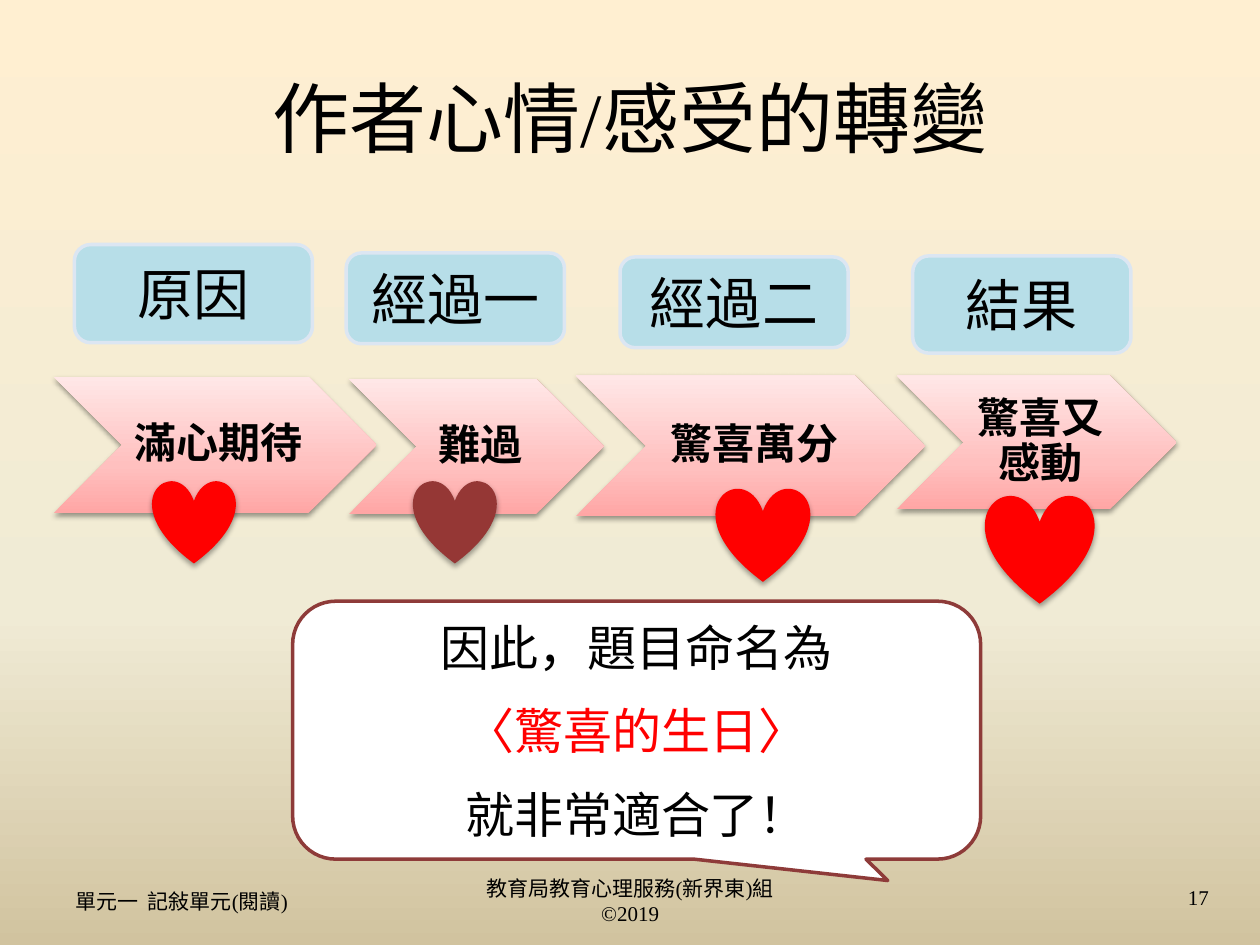
from dataclasses import dataclass

from lxml.etree import SubElement
from pptx import Presentation
from pptx.dml.color import RGBColor
from pptx.enum.shapes import MSO_SHAPE
from pptx.enum.text import MSO_ANCHOR, PP_ALIGN
from pptx.oxml.ns import qn
from pptx.util import Cm, Pt

SERIF, SANS = "Times New Roman", "Noto Sans CJK SC"
COLORS = {
    "black": "000000", "white": "FFFFFF", "red": "FF0000", "dark_red": "953735",
    "label": "B7DEE8", "label_line": "DCE6F2", "callout_line": "8E3B39",
}
BACKGROUND = [(0, "FFEFD1"), (65, "F0EBD5"), (100, "D1C39F")]
PINK = [(0, "FFA6A5"), (35, "FFC0BF"), (100, "FFE7E7")]


@dataclass
class Box:
    """Left, top, width and height in centimetres."""
    x: float
    y: float
    w: float
    h: float

    def lengths(self) -> tuple:
        return Cm(self.x), Cm(self.y), Cm(self.w), Cm(self.h)


@dataclass
class Stage:
    label: str
    mood: str
    label_box: Box
    arrow: Box
    heart: Box
    heart_color: str = "red"


@dataclass
class Caption:
    text: str
    box: Box
    size: int
    align: PP_ALIGN


STAGES = [
    Stage("原因", "滿心期待", Box(1.5, 4.93, 4.8, 1.98),
          Box(1.09, 7.6, 6.5, 2.74), Box(3.07, 9.68, 1.68, 1.68)),
    Stage("經過一", "難過", Box(6.98, 5.1, 4.4, 1.83),
          Box(7.04, 7.64, 5.13, 2.72), Box(8.33, 9.68, 1.68, 1.68), "dark_red"),
    Stage("經過二", "驚喜萬分", Box(12.5, 5.18, 4.6, 1.83),
          Box(11.61, 7.57, 7.04, 2.84), Box(14.43, 9.83, 1.9, 1.9)),
    Stage("結果", "驚喜又感動", Box(18.4, 5.16, 4.4, 1.96),
          Box(18.08, 7.57, 5.64, 2.7), Box(19.86, 9.97, 2.2, 2.2)),
]
CAPTIONS = [
    Caption("作者心情/感受的轉變", Box(1.27, 0.76, 22.86, 3.18), 44, PP_ALIGN.CENTER),
    Caption("單元一  記敍單元(閱讀)", Box(1.27, 17.65, 5.92, 1.02), 12, PP_ALIGN.LEFT),
    Caption("教育局教育心理服務(新界東)組\v©2019", Box(8.68, 17.65, 8.05, 1.02), 12,
            PP_ALIGN.CENTER),
    Caption("17", Box(18.7, 17.58, 5.92, 1.02), 12, PP_ALIGN.RIGHT),
]
CONCLUSION = [("因此，題目命名為", "black"), ("〈驚喜的生日〉", "red"),
              ("就非常適合了！", "black")]


def rgb(name: str) -> RGBColor:
    return RGBColor.from_string(COLORS[name])


def set_gradient(fill, root, stops: list, angle: int) -> None:
    """Give fill the stops; root is the element that holds the fill."""
    fill.gradient()
    fill.gradient_angle = angle
    stop_list = root.find(".//" + qn("a:gsLst"))
    stop_list.clear()
    for percent, color in stops:
        gs = SubElement(stop_list, qn("a:gs"), pos=str(percent * 1000))
        SubElement(gs, qn("a:srgbClr"), val=color)


def add_shadow(sp, opacity: int, distance: float) -> None:
    effects = sp._element.spPr.find(qn("a:effectLst"))
    shadow = SubElement(effects, qn("a:outerShdw"), blurRad=str(Pt(3.1)),
                        dist=str(Pt(distance)), dir="5400000", rotWithShape="0")
    color = SubElement(shadow, qn("a:srgbClr"), val=COLORS["black"])
    SubElement(color, qn("a:alpha"), val=str(opacity * 1000))


def add_relative_space(p, side: str, percent: int) -> None:
    """Add spcBef or spcAft as a share of the line height."""
    space = SubElement(p._p.get_or_add_pPr(), qn("a:" + side))
    SubElement(space, qn("a:spcPct"), val=str(percent * 1000))


def format_paragraph(p, size: int, font: str, align=PP_ALIGN.CENTER,
                     color: str = "black", bold: bool = False) -> None:
    p.alignment = align
    for r in p.runs:
        r.font.size, r.font.name, r.font.bold = Pt(size), font, bold
        r.font.color.rgb = rgb(color)
        SubElement(r.font._element, qn("a:ea"), typeface=SANS)


def add_shape(s, kind, box: Box, fill: str = "", line: str = ""):
    sp = s.shapes.add_shape(kind, *box.lengths())
    sp.shadow.inherit = False
    if fill:
        sp.fill.solid()
        sp.fill.fore_color.rgb = rgb(fill)
    if line:
        sp.line.color.rgb = rgb(line)
        sp.line.width = Pt(2)
    else:
        sp.line.fill.background()
    return sp


def add_text(s, box: Box, text: str):
    tf = s.shapes.add_textbox(*box.lengths()).text_frame
    tf.word_wrap = True
    tf.vertical_anchor = MSO_ANCHOR.MIDDLE
    tf.text = text
    return tf


def add_arrow(s, stage: Stage) -> None:
    a = stage.arrow
    sp = add_shape(s, MSO_SHAPE.CHEVRON, a)
    set_gradient(sp.fill, sp._element.spPr, PINK, 90)
    add_shadow(sp, 38, 1.6)
    tf = add_text(s, Box(a.x + a.h / 2, a.y, a.w - a.h, a.h), stage.mood)
    tf.margin_left = Cm(0.25)
    tf.margin_right = tf.margin_top = tf.margin_bottom = Cm(0.1)
    p = tf.paragraphs[0]
    p.line_spacing = 0.9
    add_relative_space(p, "spcAft", 35)
    format_paragraph(p, 24, SANS, bold=True)


def add_heart(s, stage: Stage) -> None:
    add_shadow(add_shape(s, MSO_SHAPE.HEART, stage.heart, stage.heart_color), 35, 1.8)


def add_label(s, stage: Stage) -> None:
    sp = add_shape(s, MSO_SHAPE.ROUNDED_RECTANGLE, stage.label_box, "label", "label_line")
    tf = sp.text_frame
    tf.text = stage.label
    tf.vertical_anchor = MSO_ANCHOR.MIDDLE
    format_paragraph(tf.paragraphs[0], 32, SANS)


def add_conclusion(s) -> None:
    sp = add_shape(s, MSO_SHAPE.ROUNDED_RECTANGULAR_CALLOUT,
                   Box(5.9, 12.12, 13.87, 5.2), "white", "callout_line")
    for i, value in enumerate((0.365, 0.583, 0.167)):
        sp.adjustments[i] = value
    tf = sp.text_frame
    tf.vertical_anchor = MSO_ANCHOR.MIDDLE
    tf.text = "\n".join(text for text, _ in CONCLUSION)
    for p, (_, color) in zip(tf.paragraphs, CONCLUSION):
        add_relative_space(p, "spcBef", 50)
        format_paragraph(p, 28, SERIF, color=color)


def main() -> None:
    prs = Presentation()
    prs.slide_width, prs.slide_height = Cm(25.4), Cm(19.05)
    s = prs.slides.add_slide(prs.slide_layouts[6])
    set_gradient(s.background.fill, s._element, BACKGROUND, 270)
    for c in CAPTIONS:
        tf = add_text(s, c.box, c.text)
        format_paragraph(tf.paragraphs[0], c.size, SERIF, c.align)
    for draw in (add_arrow, add_heart, add_label):
        for stage in STAGES:
            draw(s, stage)
    add_conclusion(s)
    prs.save("out.pptx")


if __name__ == "__main__":
    main()
